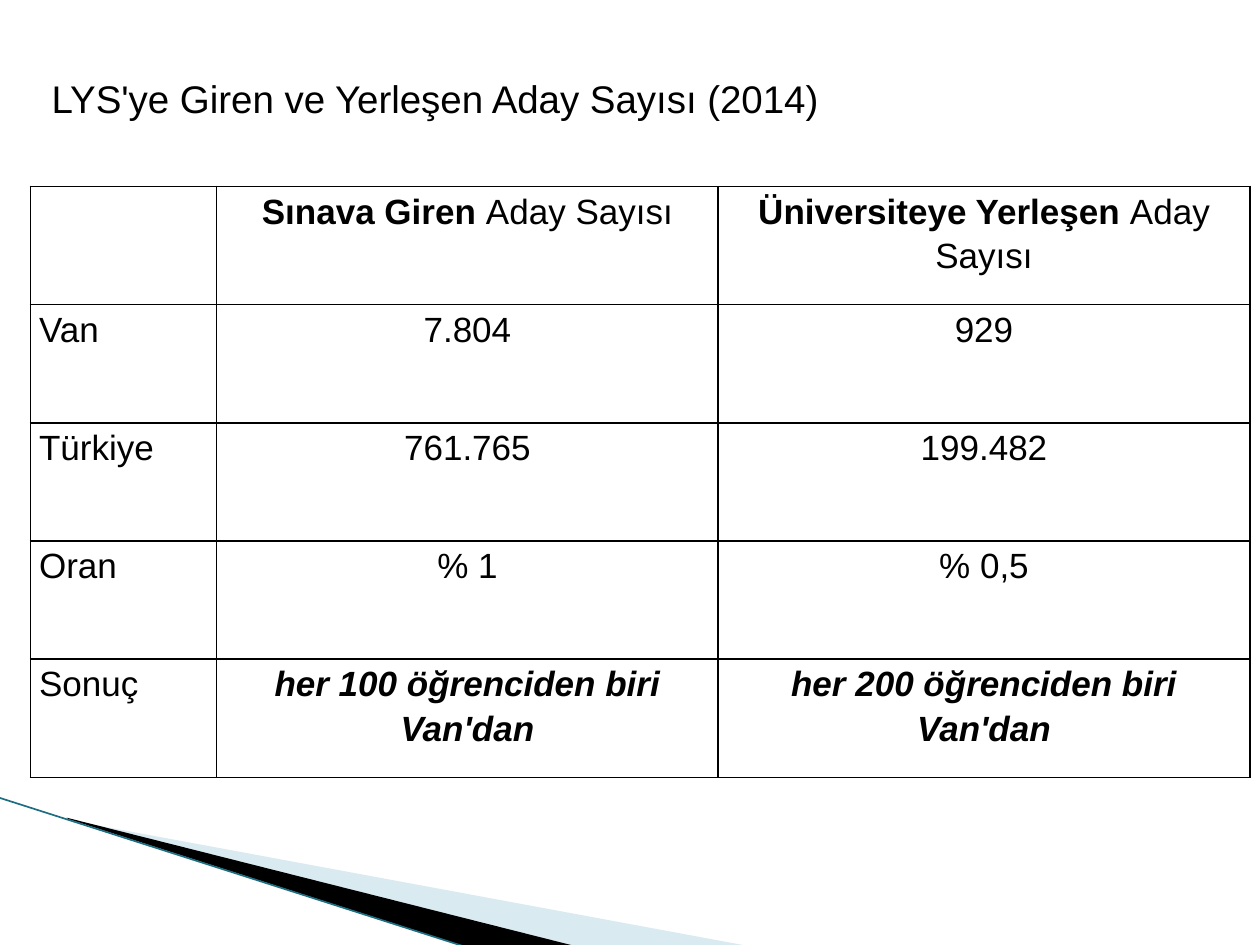
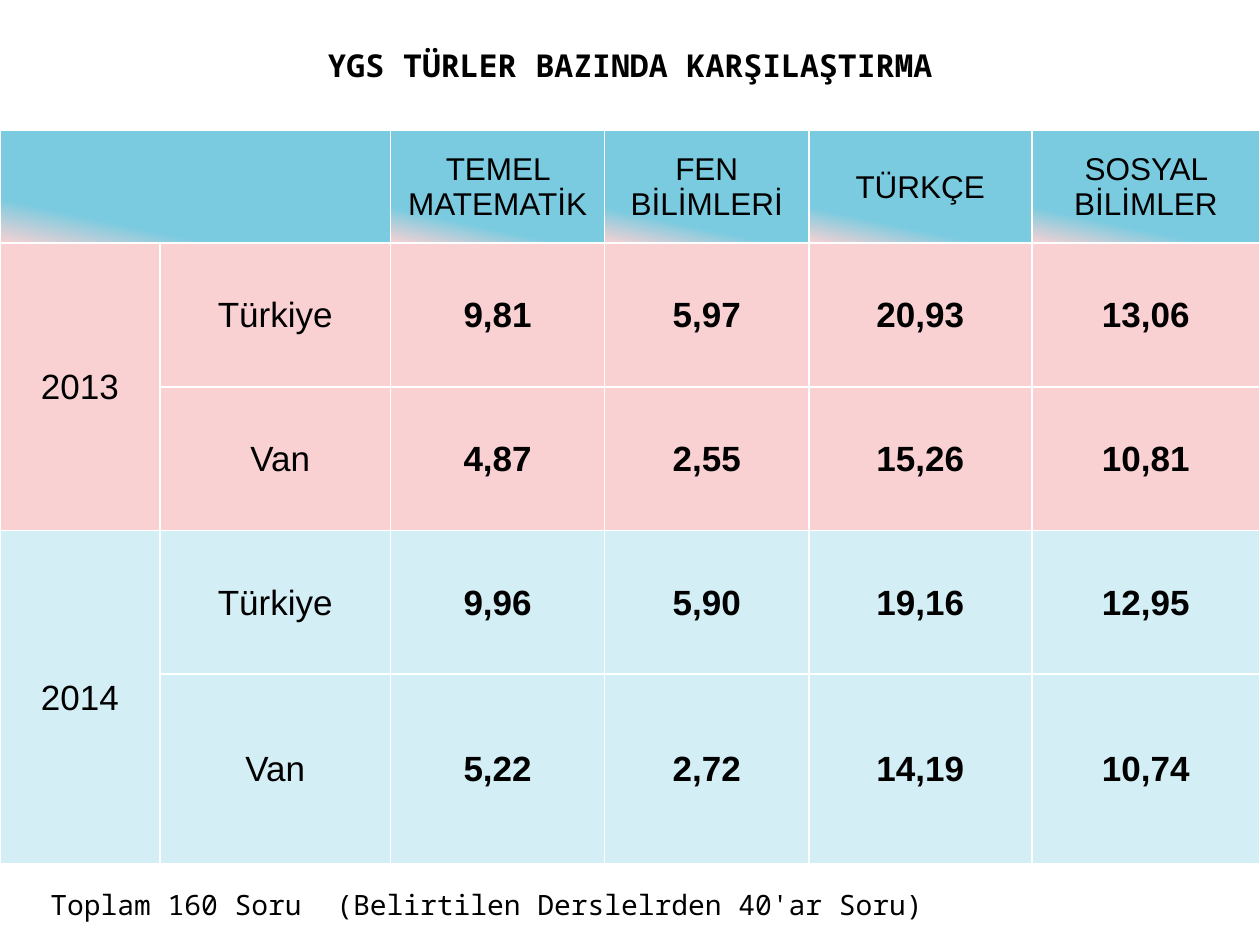
from dataclasses import dataclass

from lxml.etree import SubElement
from pptx import Presentation
from pptx.dml.color import RGBColor
from pptx.enum.text import MSO_ANCHOR, MSO_AUTO_SIZE, PP_ALIGN
from pptx.oxml.ns import qn
from pptx.slide import Slide
from pptx.table import Table, _Cell
from pptx.util import Inches, Pt

COLORS = {
    "text": "000000",
    "white": "FFFFFF",
    "wedge_light": "A0CBDC",
    "wedge_dark": "000000",
    "wedge_line": "1E6E82",
    "header": "7ACBE0",
    "year_2013": "F9D1D3",
    "year_2014": "D3EEF5",
}
BODY_FONT = "Arial"
MONO_FONT = "Noto Sans Mono"


@dataclass(frozen=True)
class TextStyle:
    size: int
    font: str = BODY_FONT
    bold: bool = False
    italic: bool = False
    align: PP_ALIGN = PP_ALIGN.CENTER


@dataclass(frozen=True)
class CellLook:
    margins: tuple[float, float, float, float]  # left, top, right, bottom
    anchor: MSO_ANCHOR
    border: str
    line_spacing: float = 1.0
    space: int = 0


@dataclass(frozen=True)
class Wedge:
    points: list[tuple[float, float]]
    color: str
    opacity: int = 100


PLAIN_LOOK = CellLook((0.07, 0, 0.07, 0), MSO_ANCHOR.TOP, "text", 1.15, 2)
COLOR_LOOK = CellLook((0.01, 0.01, 0.01, 0), MSO_ANCHOR.MIDDLE, "white")

WEDGES = [
    Wedge([(0.55, 6.51), (5.95, 7.51), (4.56, 7.51), (0.55, 6.5)], "wedge_light", 40),
    Wedge([(0.53, 6.49), (4.57, 7.51), (3.72, 7.52), (0.54, 6.5)], "wedge_dark"),
]

CANDIDATE_ROWS = [
    ("Van", "7.804", "929"),
    ("Türkiye", "761.765", "199.482"),
    ("Oran", "% 1", "% 0,5"),
    ("Sonuç", "her 100 öğrenciden biri Van'dan", "her 200 öğrenciden biri Van'dan"),
]
SUBJECTS = ["TEMEL MATEMATİK", "FEN BİLİMLERİ", "TÜRKÇE", "SOSYAL BİLİMLER"]
SCORES = {
    "2013": {
        "Türkiye": ["9,81", "5,97", "20,93", "13,06"],
        "Van": ["4,87", "2,55", "15,26", "10,81"],
    },
    "2014": {
        "Türkiye": ["9,96", "5,90", "19,16", "12,95"],
        "Van": ["5,22", "2,72", "14,19", "10,74"],
    },
}


def rgb(name: str) -> RGBColor:
    return RGBColor.from_string(COLORS[name])


def format_run(run, style: TextStyle, bold: bool) -> None:
    run.font.name = style.font
    run.font.size = Pt(style.size)
    run.font.bold = bold
    run.font.italic = style.italic
    run.font.color.rgb = rgb("text")


# Decoration, drawn once and moved to the back of the slide master
def add_master_wedges(slide: Slide) -> None:
    decoration = []
    for wedge in WEDGES:
        points = [(Inches(x), Inches(y)) for x, y in wedge.points]
        builder = slide.shapes.build_freeform(*points[0])
        builder.add_line_segments(points[1:], close=True)
        shape = builder.convert_to_shape()
        shape.shadow.inherit = False
        shape.fill.solid()
        shape.fill.fore_color.rgb = rgb(wedge.color)
        shape.line.fill.background()
        if wedge.opacity < 100:
            color = shape._element.spPr.find(qn("a:solidFill"))[0]
            SubElement(color, qn("a:alpha"), val=str(wedge.opacity * 1000))
        decoration.append(shape)
    edge = slide.shapes.add_connector(
        1, Inches(-0.01), Inches(6.33), Inches(3.71), Inches(7.52)
    )
    edge.line.color.rgb = rgb("wedge_line")
    edge.line.width = Pt(0.95)
    SubElement(edge._element.spPr, qn("a:effectLst"))
    decoration.append(edge)

    master_tree = slide.slide_layout.slide_master.shapes._spTree
    for index, shape in enumerate(decoration):
        shape._element[0][0].set("id", str(100 + index))
        master_tree.insert(2 + index, shape._element)


# Tables
def format_cell(cell: _Cell, look: CellLook) -> None:
    cell.margin_left, cell.margin_top, cell.margin_right, cell.margin_bottom = (
        Inches(margin) for margin in look.margins
    )
    cell.vertical_anchor = look.anchor
    properties = cell._tc.get_or_add_tcPr()
    for side in ("L", "R", "T", "B"):
        line = SubElement(properties, qn(f"a:ln{side}"), w=str(Pt(1)))
        fill = SubElement(line, qn("a:solidFill"))
        SubElement(fill, qn("a:srgbClr"), val=COLORS[look.border])
    cell.fill.background()


def add_grid(slide: Slide, left: float, top: float, widths: list[float],
             heights: list[float], look: CellLook) -> Table:
    table = slide.shapes.add_table(
        len(heights), len(widths), Inches(left), Inches(top),
        Inches(sum(widths)), Inches(sum(heights)),
    ).table
    table.first_row = table.horz_banding = False
    for column, width in zip(table.columns, widths):
        column.width = Inches(width)
    for row, height in zip(table.rows, heights):
        row.height = Inches(height)
    for cell in table.iter_cells():
        format_cell(cell, look)
    return table


def write_cell(cell: _Cell, text: str, style: TextStyle, look: CellLook,
               bold_lead: str = "") -> None:
    paragraph = cell.text_frame.paragraphs[0]
    paragraph.alignment = style.align
    paragraph.line_spacing = look.line_spacing
    paragraph.space_after = Pt(look.space)
    paragraph.text = bold_lead or text
    if bold_lead:
        paragraph.add_run().text = text
    for index, run in enumerate(paragraph.runs):
        format_run(run, style, style.bold or (bool(bold_lead) and index == 0))


def add_tab_stop(cell: _Cell, position: float) -> None:
    properties = cell.text_frame.paragraphs[0]._p.get_or_add_pPr()
    tabs = SubElement(properties, qn("a:tabLst"))
    SubElement(tabs, qn("a:tab"), pos=str(Inches(position)), algn="l")


def fill_cell(cell: _Cell, color: str) -> None:
    cell.fill.solid()
    cell.fill.fore_color.rgb = rgb(color)


def fill_header(cell: _Cell) -> None:
    cell.fill.gradient()
    cell.fill.gradient_angle = 360 - 102
    for stop, position, color in zip(
        cell.fill.gradient_stops, (0.77, 1), ("header", "year_2013")
    ):
        stop.position = position
        stop.color.rgb = rgb(color)


# Slides
def build_candidates(presentation) -> None:
    slide = presentation.slides.add_slide(presentation.slide_layouts[5])
    add_master_wedges(slide)

    title = slide.shapes.title
    title.left, title.top = Inches(0.31), Inches(0.54)
    title.width, title.height = Inches(9.14), Inches(0.47)
    frame = title.text_frame
    frame.text = "LYS'ye Giren ve Yerleşen Aday Sayısı (2014)"
    frame.word_wrap = True
    frame.auto_size = MSO_AUTO_SIZE.NONE
    frame.vertical_anchor = MSO_ANCHOR.MIDDLE
    frame.paragraphs[0].alignment = PP_ALIGN.JUSTIFY
    format_run(frame.paragraphs[0].runs[0], TextStyle(22), False)

    table = add_grid(slide, 0.24, 1.48, [1.48, 3.98, 4.22], [4.69 / 5] * 5, PLAIN_LOOK)
    label = TextStyle(20, align=PP_ALIGN.JUSTIFY)
    value = TextStyle(20)
    conclusion = TextStyle(20, bold=True, italic=True)
    for column, lead in enumerate(("Sınava Giren ", "Üniversiteye Yerleşen "), 1):
        write_cell(table.cell(0, column), "Aday Sayısı", value, PLAIN_LOOK, lead)
    for row, (name, *values) in enumerate(CANDIDATE_ROWS, 1):
        write_cell(table.cell(row, 0), name, label, PLAIN_LOOK)
        style = conclusion if name == "Sonuç" else value
        for column, text in enumerate(values, 1):
            write_cell(table.cell(row, column), text, style, PLAIN_LOOK)


def build_scores(presentation) -> None:
    slide = presentation.slides.add_slide(presentation.slide_layouts[6])
    table = add_grid(
        slide, 0, 0, [1.27, 1.83, 1.7, 1.62, 1.77, 1.81],
        [1.03, 0.9, 1.14, 1.14, 1.14, 1.51, 0.64], COLOR_LOOK,
    )

    # Title and note rows span the whole table
    heading, note = table.cell(0, 0), table.cell(6, 0)
    for row, cell in ((0, heading), (6, note)):
        cell.merge(table.cell(row, 5))
        fill_cell(cell, "white")
    write_cell(heading, "YGS TÜRLER BAZINDA KARŞILAŞTIRMA",
               TextStyle(18, MONO_FONT, bold=True), COLOR_LOOK)
    note.margin_left = Inches(0.4)
    write_cell(note, "Toplam 160 Soru\t(Belirtilen Derslelrden 40'ar Soru)",
               TextStyle(16, MONO_FONT, align=PP_ALIGN.LEFT), COLOR_LOOK)
    add_tab_stop(note, 2.27)

    # Subject headers
    table.cell(1, 0).merge(table.cell(1, 1))
    fill_header(table.cell(1, 0))
    for column, subject in enumerate(SUBJECTS, 2):
        fill_header(table.cell(1, column))
        write_cell(table.cell(1, column), subject, TextStyle(18), COLOR_LOOK)

    # Two rows for each year
    for index, (year, regions) in enumerate(SCORES.items()):
        first_row = 2 + 2 * index
        table.cell(first_row, 0).merge(table.cell(first_row + 1, 0))
        write_cell(table.cell(first_row, 0), year, TextStyle(20), COLOR_LOOK)
        for row, (region, scores) in enumerate(regions.items(), first_row):
            for column in range(6):
                fill_cell(table.cell(row, column), f"year_{year}")
            write_cell(table.cell(row, 1), region, TextStyle(20), COLOR_LOOK)
            for column, score in enumerate(scores, 2):
                write_cell(table.cell(row, column), score,
                           TextStyle(20, bold=True), COLOR_LOOK)
    table.cell(3, 1).margin_left = Inches(0.09)


def main() -> None:
    presentation = Presentation()
    presentation.slide_width, presentation.slide_height = Inches(10), Inches(7.5)
    build_candidates(presentation)
    build_scores(presentation)
    presentation.save("out.pptx")


if __name__ == "__main__":
    main()
